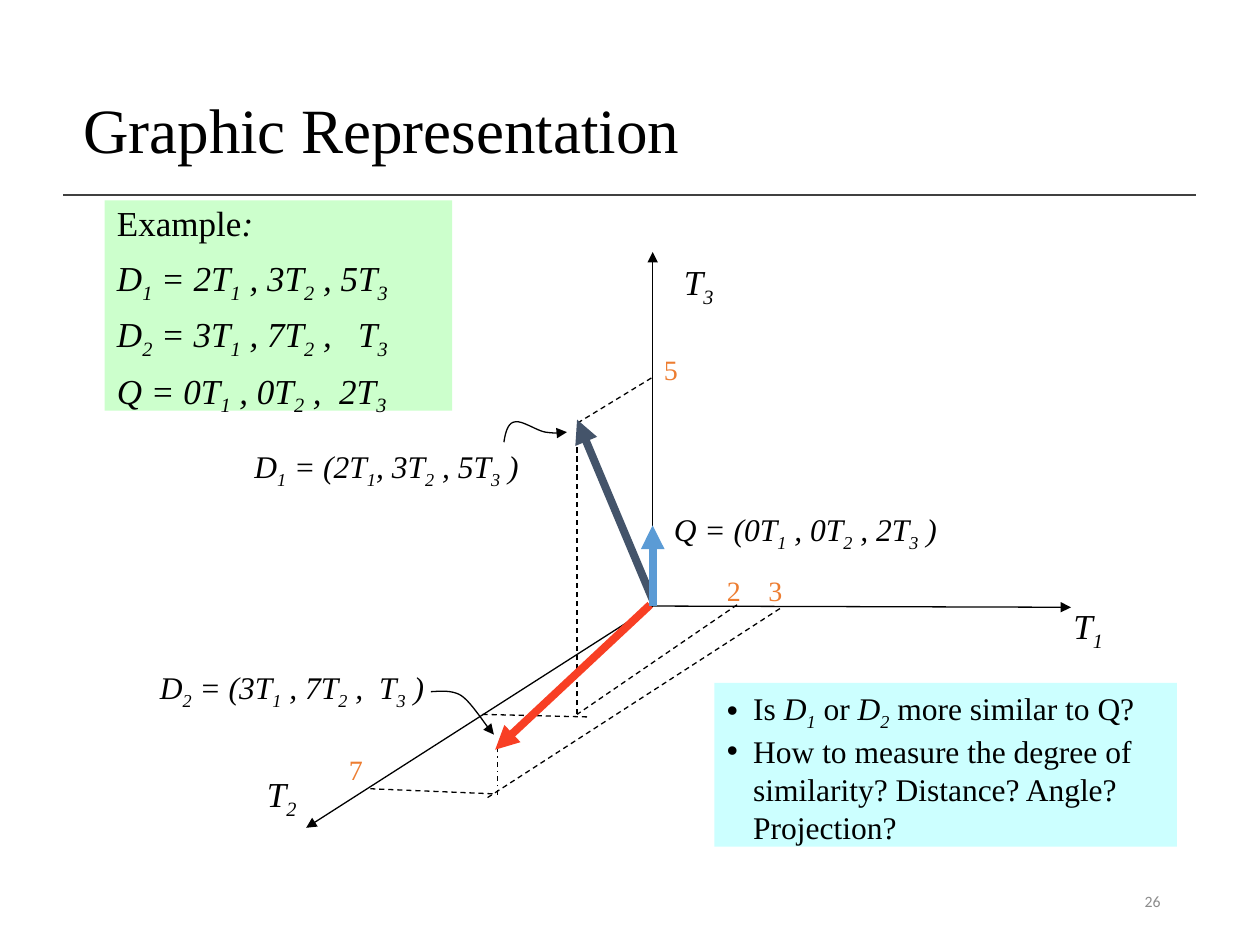
from collections import namedtuple
from dataclasses import dataclass

from pptx import Presentation
from pptx import util as u
from pptx.dml.color import RGBColor
from pptx.enum import dml, shapes, text
from pptx.oxml import ns, xmlchemy as xc

Box = namedtuple("Box", "x y w h")


@dataclass(frozen=True)
class Theme:
    """Colours, fonts and type sizes of the slide."""
    serif: str = "Times New Roman"
    sans: str = "Calibri"
    ink: str = "000000"
    rule: str = "404040"
    tick: str = "ED7D31"
    page: str = "8C8C8C"
    green: str = "CCFFCC"
    cyan: str = "CCFFFF"
    d1: str = "44546A"
    d2: str = "F83F24"
    query: str = "5B9BD5"
    title_size: float = 36
    body_size: float = 20
    label_size: float = 18
    tick_size: float = 16
    page_size: float = 9
    thin: float = 0.75
    thick: float = 4.5


T = Theme()


def rgb(value):
    """Turn a hex string into a colour."""
    return RGBColor.from_string(value)


def add_child(parent, tag, **attrs):
    """Append a DrawingML element with attributes."""
    child = xc.OxmlElement(tag)
    for key, value in attrs.items():
        child.set(key, str(value))
    parent.append(child)
    return child


def add_run(p, words, size, color=T.ink, font=T.serif, italic=False, sub=False):
    """Add one formatted run."""
    r = p.add_run()
    r.text = words
    r.font.size, r.font.name, r.font.italic = u.Pt(size), font, italic
    r.font.color.rgb = rgb(color)
    if sub:
        r._r.get_or_add_rPr().set("baseline", "-25000")


def write(p, markup, size, **style):
    """Write markup where *...* is italic and _ lowers the next character."""
    for i, part in enumerate(markup.split("*")):
        for j, piece in enumerate(part.split("_")):
            if j:
                add_run(p, piece[0], size, italic=i % 2 == 1, sub=True, **style)
                piece = piece[1:]
            if piece:
                add_run(p, piece, size, italic=i % 2 == 1, **style)


def add_label(s, box, markup, size, wrap=False, **style):
    """Add a one-paragraph text box."""
    tf = s.shapes.add_textbox(*map(u.Inches, box)).text_frame
    tf.word_wrap = wrap
    write(tf.paragraphs[0], markup, size, **style)
    return tf


def add_panel(s, box, fill):
    """Add a filled rectangle and return its text frame."""
    sp = s.shapes.add_shape(shapes.MSO_SHAPE.RECTANGLE, *map(u.Inches, box))
    sp.shadow.inherit = False
    sp.fill.solid()
    sp.fill.fore_color.rgb = rgb(fill)
    sp.line.fill.background()
    tf = sp.text_frame
    tf.word_wrap, tf.vertical_anchor = True, text.MSO_ANCHOR.TOP
    return tf


def add_paragraphs(tf, lines, size, indent, bullet=None):
    """Write left-aligned paragraphs with a hanging indent."""
    for i, line in enumerate(lines):
        p = tf.paragraphs[0] if i == 0 else tf.add_paragraph()
        p.alignment = text.PP_ALIGN.LEFT
        pPr = p._p.get_or_add_pPr()
        pPr.set("marL", str(u.Inches(indent)))
        pPr.set("indent", str(-u.Inches(indent)))
        if bullet:
            add_child(pPr, "a:buFont", typeface="Arial")
            add_child(pPr, "a:buChar", char=bullet)
        write(p, line, size)


def style_line(sp, color, width, dash=None, arrow=False):
    """Format a stroke and give it an arrowhead if asked."""
    sp.line.color.rgb, sp.line.width = rgb(color), u.Pt(width)
    if dash:
        sp.line.dash_style = dash
    if arrow:
        add_child(sp.line._get_or_add_ln(), "a:tailEnd", type="triangle")


def add_line(s, start, end, color=T.ink, width=T.thin, dash=None, arrow=False):
    """Add a straight connector between two points."""
    c = s.shapes.add_connector(
        shapes.MSO_CONNECTOR.STRAIGHT, *map(u.Inches, (*start, *end)))
    style_line(c, color, width, dash, arrow)
    add_child(c._element.find(ns.qn("p:spPr")), "a:effectLst")


def bezier(points, steps=12):
    """Sample a chain of cubic curves sharing end points."""
    for k in range(0, len(points) - 1, 3):
        for n in range(1, steps + 1):
            t = n / steps
            weights = ((1 - t) ** 3, 3 * t * (1 - t) ** 2, 3 * t * t * (1 - t), t ** 3)
            yield tuple(sum(w * p[axis] for w, p in zip(weights, points[k:k + 4]))
                        for axis in (0, 1))


def add_curve(s, points):
    """Add a curved pointer ending in an arrowhead."""
    start, *rest = [(u.Inches(x), u.Inches(y)) for x, y in (points[0], *bezier(points))]
    fb = s.shapes.build_freeform(*start)
    fb.add_line_segments(rest, close=False)
    sp = fb.convert_to_shape()
    sp.shadow.inherit = False
    sp.fill.background()
    style_line(sp, T.ink, T.thin, arrow=True)


def add_header(s, box):
    """Place the title and the rule beneath it."""
    title = s.shapes.title
    title.left, title.top, title.width, title.height = map(
        u.Inches, (box.x + 0.06, box.y, 8.62, 0.86))
    tf = title.text_frame
    tf.word_wrap, tf.vertical_anchor = True, text.MSO_ANCHOR.MIDDLE
    p = tf.paragraphs[0]
    p.alignment, p.line_spacing = text.PP_ALIGN.LEFT, 0.9
    write(p, "Graphic Representation", T.title_size)
    add_line(s, (box.x, box.y + box.h), (box.x + box.w, box.y + box.h), T.rule, 1)


def add_example(s, box):
    """Place the panel that defines the vectors."""
    tf = add_panel(s, box, T.green)
    add_paragraphs(tf, ["Example*:*", "*D_1 = 2T_1 , 3T_2 , 5T_3*",
                        "*D_2 = 3T_1 , 7T_2 ,   T_3*", "*Q = 0T_1 , 0T_2 ,  2T_3*"],
                   T.body_size, 0.19)
    for p in tf.paragraphs:
        p.line_spacing, p.space_before = 0.9, u.Pt(7.5)


def add_diagram(s, box):
    """Place axes, projections, vectors and their labels."""
    def at(x, y):
        return box.x + x, box.y + y

    origin = (4.18, 2.81)
    for end in ((7.5, 2.82), (1.43, 4.57), (4.18, 0)):
        add_line(s, at(*origin), at(*end), arrow=True)

    dash, dash_dot = dml.MSO_LINE.DASH, dml.MSO_LINE.DASH_DOT
    for start, end, style in (
            ((4.85, 2.8), (3.58, 3.67), dash), ((2.83, 3.67), (3.66, 3.69), dash),
            ((3.58, 3.67), (3.58, 1.5), dash), ((5.19, 2.83), (2.87, 4.33), dash),
            ((2.91, 4.3), (1.94, 4.26), dash), ((2.95, 4.31), (2.95, 3.92), dash_dot),
            ((4.17, 1), (3.58, 1.36), dash)):
        add_line(s, at(*start), at(*end), dash=style)

    for start, end, color in (((4.18, 2.76), (3.58, 1.33), T.d1),
                              ((4.16, 2.8), (2.93, 3.95), T.d2),
                              (origin, (4.18, 2.17), T.query)):
        add_line(s, at(*start), at(*end), color, T.thick, arrow=True)

    for x, y, name in ((4.33, 0.02, "*T_3*"), (7.42, 2.75, "*T_1*"), (1.02, 4.08, "*T_2*")):
        add_label(s, (*at(x, y), 0.45, 0.43), name, T.body_size)
    for x, y, w, name in ((0.92, 1.5, 2.45, "*D_1 = (2T_1, 3T_2 , 5T_3 )*"),
                          (0.17, 3.25, 2.34, "*D_2 = (3T_1 , 7T_2 ,  T_3 )*"),
                          (4.25, 2, 2.34, "*Q = (0T_1 , 0T_2 , 2T_3 )*")):
        add_label(s, (*at(x, y), w, 0.4), name, T.label_size)
    for x, y, value in ((1.67, 3.92, "7"), (5, 2.5, "3"), (4.67, 2.5, "2"), (4.17, 0.75, "5")):
        add_label(s, (*at(x, y), 0.31, 0.37), value, T.tick_size, color=T.tick)

    for points in (
            ((3, 1.51), (3.01, 1.44), (3.03, 1.36), (3.08, 1.35), (3.14, 1.33),
             (3.26, 1.42), (3.33, 1.43), (3.4, 1.44), (3.45, 1.44), (3.5, 1.43)),
            ((2.42, 3.49), (2.46, 3.49), (2.58, 3.47), (2.66, 3.52),
             (2.75, 3.58), (2.86, 3.77), (2.92, 3.83))):
        add_curve(s, [at(*point) for point in points])


def add_questions(s, box):
    """Place the panel of bulleted questions."""
    add_paragraphs(add_panel(s, box, T.cyan), [
        "Is *D_1* or *D_2* more similar to Q?",
        "How to measure the degree of similarity? Distance? Angle? Projection?",
    ], T.label_size, 0.21, "•")


def add_page_number(s, box):
    """Place the page number."""
    tf = add_label(s, box, "26", T.page_size, wrap=True, color=T.page, font=T.sans)
    tf.vertical_anchor = text.MSO_ANCHOR.MIDDLE
    tf.paragraphs[0].alignment = text.PP_ALIGN.RIGHT


def main():
    """Build and save the slide."""
    prs = Presentation()
    prs.slide_width, prs.slide_height = u.Inches(10), u.Inches(7.5)
    s = prs.slides.add_slide(prs.slide_layouts[5])
    add_header(s, Box(0.5, 0.63, 8.99, 0.92))
    add_example(s, Box(0.83, 1.59, 2.76, 1.67))
    add_diagram(s, Box(1, 2, 8, 4.6))
    add_questions(s, Box(5.67, 5.42, 3.67, 1.3))
    add_page_number(s, Box(7.06, 6.95, 2.25, 0.4))
    prs.save("out.pptx")


if __name__ == "__main__":
    main()
